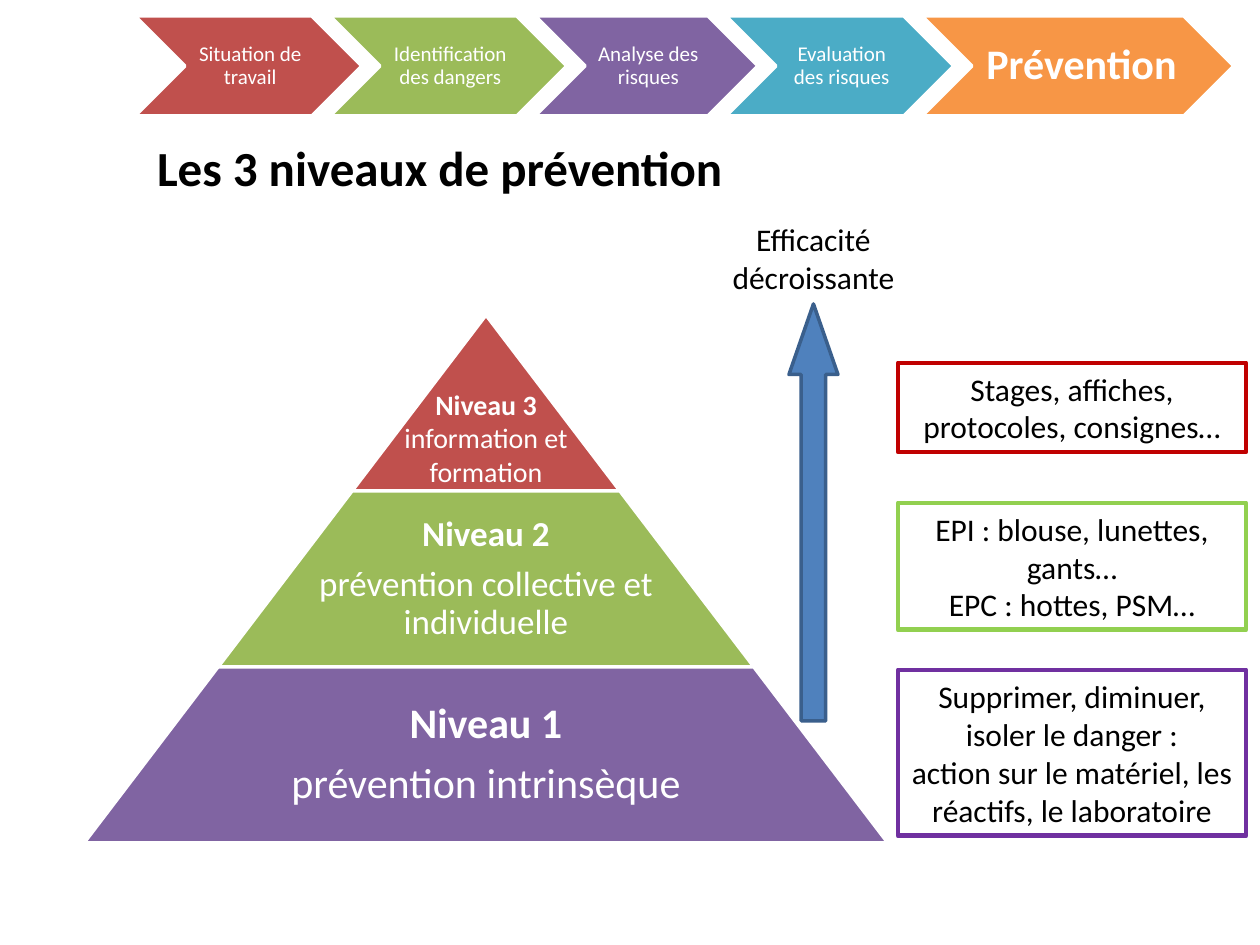
from pptx import Presentation
from pptx.dml.color import RGBColor
from pptx.enum.shapes import MSO_SHAPE as SHAPE
from pptx.enum.text import MSO_ANCHOR as ANCHOR, PP_ALIGN as ALIGN
from pptx.util import Pt

PX = 914400 / 126
FONT = "Calibri"
WHITE = RGBColor(0xFF, 0xFF, 0xFF)
BLACK = RGBColor(0, 0, 0)
RED = RGBColor(0xC0, 0x50, 0x4D)
GREEN = RGBColor(0x9B, 0xBB, 0x59)
PURPLE = RGBColor(0x80, 0x64, 0xA2)
TEAL = RGBColor(0x4B, 0xAC, 0xC6)
ORANGE = RGBColor(0xF7, 0x96, 0x46)
BLUE = RGBColor(0x4F, 0x81, 0xBD)
DARK_BLUE = RGBColor(0x3A, 0x5F, 0x8C)
DEEP_RED = RGBColor(0xC0, 0, 0)
LIGHT_GREEN = RGBColor(0x92, 0xD0, 0x50)
VIOLET = RGBColor(0x70, 0x30, 0xA0)

TITLE = "Les 3 niveaux de prévention"
ARROW_LABEL = "Efficacité décroissante"

# text, width, colour, size, bold
STEPS = [
    ("Situation de travail", 227, RED, 12, False),
    ("Identification des dangers", 237, GREEN, 12, False),
    ("Analyse des risques", 223, PURPLE, 12, False),
    ("Evaluation des risques", 228, TEAL, 12, False),
    ("Prévention", 312, ORANGE, 24, True),
]
STEP_LEFT, STEP_TOP, STEP_H, STEP_OVERLAP = 135, 16, 100, 32

# heading, description, colour, size, share of the width used by text, text format
LEVELS = [
    ("Niveau 3", "information et formation", RED, 16, 1,
     dict(anchor=ANCHOR.BOTTOM)),
    ("Niveau 2", "prévention collective et individuelle", GREEN, 20, 0.65,
     dict(spacing=0.9, gap=7)),
    ("Niveau 1", "prévention intrinsèque", PURPLE, 24, 0.65,
     dict(spacing=0.9, gap=8.4)),
]
PYRAMID_CENTER, PYRAMID_TOP, LEVEL_W, LEVEL_H = 486, 315, 268, 176

# paragraphs, top, height, border colour
EXAMPLES = [
    (["Stages, affiches, protocoles, consignes…"], 363, 89, DEEP_RED),
    (["EPI : blouse, lunettes, gants…", "EPC : hottes, PSM…"],
     503, 127, LIGHT_GREEN),
    (["Supprimer, diminuer, isoler le danger :",
      "action sur le matériel, les réactifs, le laboratoire"],
     670, 166, VIOLET),
]
EXAMPLE_LEFT, EXAMPLE_W = 898, 348


def px(*values):
    return [round(v * PX) for v in values]


def write(sp, paragraphs, size=18, color=BLACK, bold=(False, False),
          align=ALIGN.CENTER, anchor=ANCHOR.MIDDLE, spacing=None, gap=0,
          insets=(13, 6, 13, 6)):
    """Fill a shape with text; bold has one value per paragraph."""
    tf = sp.text_frame
    tf.word_wrap = True
    tf.vertical_anchor = anchor
    (tf.margin_left, tf.margin_top,
     tf.margin_right, tf.margin_bottom) = px(*insets)
    for i, text in enumerate(paragraphs):
        p = tf.paragraphs[0] if i == 0 else tf.add_paragraph()
        p.alignment = align
        if spacing:
            p.line_spacing = spacing
        if i and gap:
            p.space_before = Pt(gap)
        r = p.add_run()
        r.text = text
        r.font.name, r.font.size = FONT, Pt(size)
        r.font.bold = bold[i]
        r.font.color.rgb = color


def add_shape(slide, kind, box, fill=None, line=WHITE, line_width=2, adj=()):
    sp = slide.shapes.add_shape(kind, *px(*box))
    sp.shadow.inherit = False
    if fill is None:
        sp.fill.background()
    else:
        sp.fill.solid()
        sp.fill.fore_color.rgb = fill
    sp.line.color.rgb = line
    sp.line.width = Pt(line_width)
    for i, value in enumerate(adj):
        sp.adjustments[i] = value
    return sp


def add_text(slide, box, paragraphs, **fmt):
    write(slide.shapes.add_textbox(*px(*box)), paragraphs, **fmt)


def add_steps(slide):
    left = STEP_LEFT
    for text, width, color, size, bold in STEPS:
        sp = add_shape(slide, SHAPE.CHEVRON, (left, STEP_TOP, width, STEP_H), color)
        write(sp, [text], size=size, color=WHITE, bold=[bold], spacing=0.9,
              insets=(size / 2, size / 5, size / 5, size / 5))
        left += width - STEP_OVERLAP


def add_pyramid(slide):
    slope = LEVEL_W / 2 / LEVEL_H
    for i, (heading, text, color, size, share, fmt) in enumerate(LEVELS):
        top, width = PYRAMID_TOP + i * LEVEL_H, LEVEL_W * (i + 1)
        add_shape(slide, SHAPE.TRAPEZOID,
                  (PYRAMID_CENTER - width / 2, top, width, LEVEL_H),
                  color, adj=[slope])
        text_w = width * share
        add_text(slide, (PYRAMID_CENTER - text_w / 2, top, text_w, LEVEL_H),
                 [heading, text], size=size, color=WHITE, bold=(True, False),
                 insets=(3, 3, 3, 3), **fmt)


def main():
    prs = Presentation()
    prs.slide_width, prs.slide_height = px(1260, 945)
    slide = prs.slides.add_slide(prs.slide_layouts[6])
    add_steps(slide)
    add_pyramid(slide)
    for paragraphs, top, height, color in EXAMPLES:
        sp = add_shape(slide, SHAPE.RECTANGLE,
                       (EXAMPLE_LEFT, top, EXAMPLE_W, height),
                       line=color, line_width=2.75)
        write(sp, paragraphs)
    add_shape(slide, SHAPE.UP_ARROW, (789, 304, 49, 417), BLUE, DARK_BLUE,
              adj=[0.5, 1.44])
    add_text(slide, (719, 214, 189, 89), [ARROW_LABEL], anchor=ANCHOR.TOP)
    add_text(slide, (144, 131, 1116, 72), [TITLE], size=28, bold=[True],
             align=ALIGN.LEFT, anchor=ANCHOR.TOP)
    prs.save("out.pptx")


if __name__ == "__main__":
    main()
